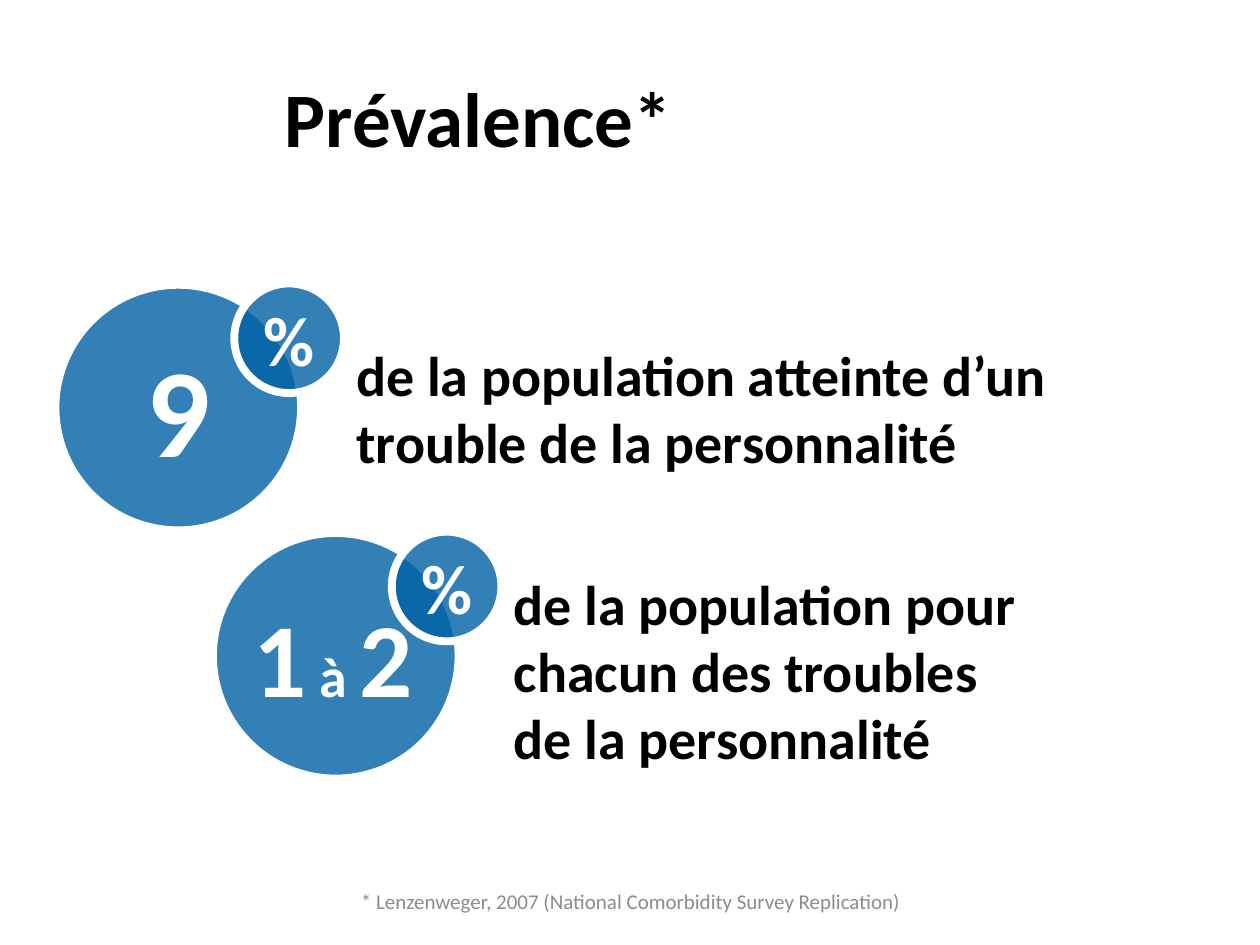
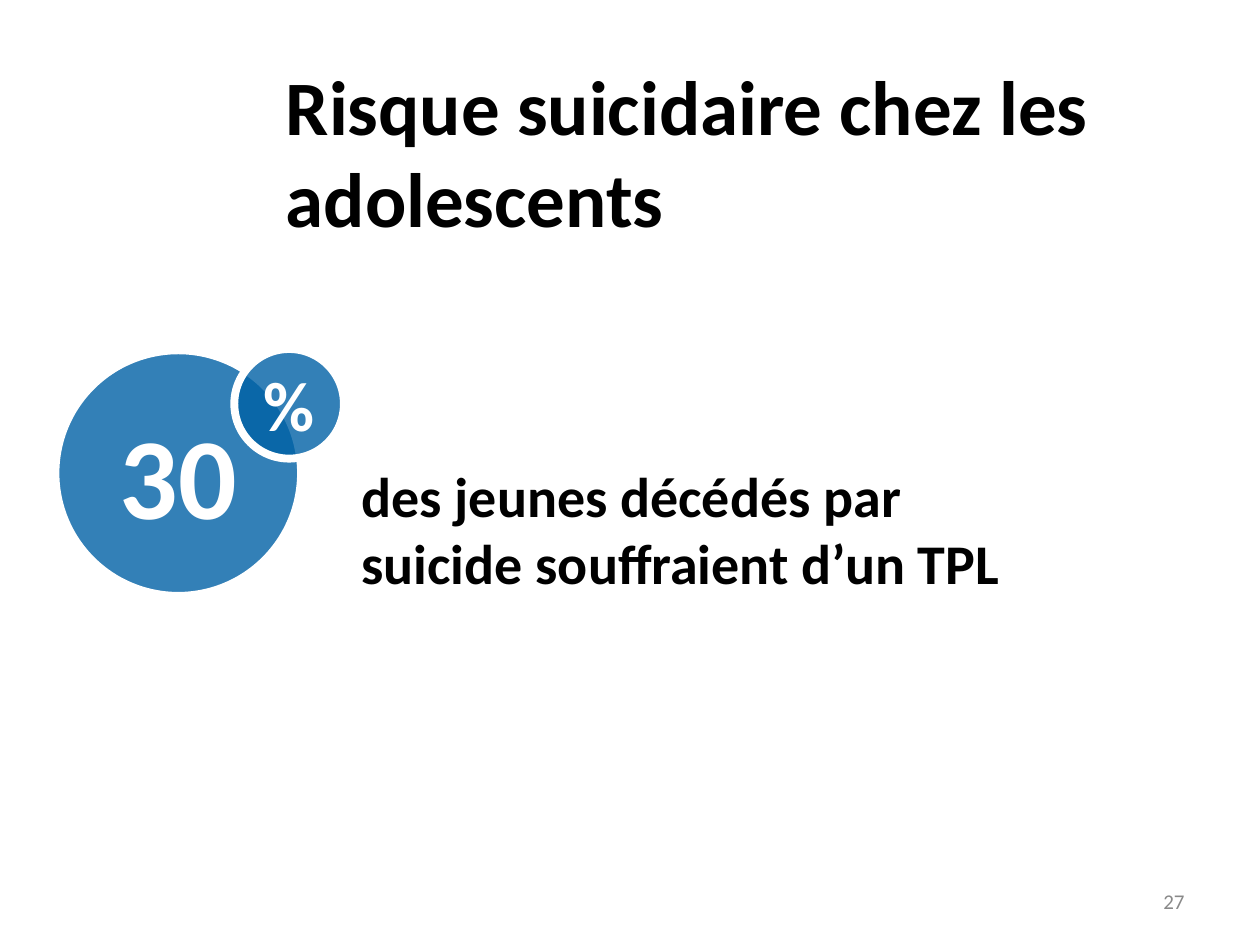
import pptx
import pptx.dml.color
import pptx.enum.shapes
import pptx.enum.text
import pptx.oxml
import pptx.oxml.ns
import pptx.util

Inches = pptx.util.Inches
ALIGN = pptx.enum.text.PP_ALIGN
ANCHOR = pptx.enum.text.MSO_ANCHOR


def color(value):
    return pptx.dml.color.RGBColor.from_string(value)


class SlideBuilder:
    font = "Calibri"
    blue = "0061A5"
    white = "FFFFFF"
    black = "000000"
    opacity = 80
    circle_size = 1.97
    badge_size = 0.87
    badge_offset = 1.43

    def __init__(self):
        self.deck = pptx.Presentation()
        self.deck.slide_width = Inches(10)
        self.deck.slide_height = Inches(7.5)
        self.page = None

    def new_page(self):
        self.page = self.deck.slides.add_slide(self.deck.slide_layouts[6])

    def style(self, span, size, tint, bold):
        span.font.name = self.font
        span.font.size = pptx.util.Pt(size)
        span.font.bold = bold
        span.font.color.rgb = color(tint)

    def text(self, text, left, top, width, height, size, tint=black,
             bold=True, align=ALIGN.LEFT, anchor=ANCHOR.MIDDLE):
        box = self.page.shapes.add_textbox(
            Inches(left), Inches(top), Inches(width), Inches(height))
        frame = box.text_frame
        frame.word_wrap = True
        frame.vertical_anchor = anchor
        frame.text = text
        para = frame.paragraphs[0]
        para.alignment = align
        for span in para.runs:
            self.style(span, size, tint, bold)

    def title(self, text, left, top):
        self.text(text, left, top, 6.77, 1.25, 44)

    def statement(self, text, left, top, width, height):
        self.text(text, left, top, width, height, 32, anchor=ANCHOR.TOP)

    def footer(self, text, left, width, tint, align):
        self.text(text, left, 6.95, width, 0.4, 12, tint, False, align)

    def circle(self, left, top, diameter, border, parts):
        shape = self.page.shapes.add_shape(
            pptx.enum.shapes.MSO_SHAPE.OVAL,
            Inches(left), Inches(top), Inches(diameter), Inches(diameter))
        shape.shadow.inherit = False
        shape.fill.solid()
        shape.fill.fore_color.rgb = color(self.blue)
        fill = shape.fill.fore_color._xFill.find(pptx.oxml.ns.qn("a:srgbClr"))
        fill.append(pptx.oxml.parse_xml(
            f'<a:alpha {pptx.oxml.ns.nsdecls("a")} val="{self.opacity * 1000}"/>'))
        shape.line.color.rgb = color(self.white)
        shape.line.width = pptx.util.Pt(border)
        frame = shape.text_frame
        frame.word_wrap = True
        frame.vertical_anchor = ANCHOR.MIDDLE
        para = frame.paragraphs[0]
        para.alignment = ALIGN.CENTER
        for text, size in parts:
            span = para.add_run()
            span.text = text
            self.style(span, size, self.white, True)
        return shape

    def percentage(self, left, top, parts):
        figure = self.circle(left, top, self.circle_size, 6, parts)
        self.circle(left + self.badge_offset, top, self.badge_size, 4.5, [("%", 40)])
        return figure


def build_prevalence(builder):
    builder.new_page()
    builder.title("Prévalence*", 2.16, 0.3)
    builder.percentage(0.43, 2.25, [("9", 72)])
    builder.statement("de la population atteinte d’un trouble de la personnalité",
                      2.73, 2.65, 6.91, 1.18)
    span_figure = builder.percentage(1.68, 4.22, [("1", 60), (" à ", 32), ("2", 60)])
    span_figure.text_frame.margin_left = Inches(0.04)
    span_figure.text_frame.margin_right = Inches(0.08)
    builder.statement("de la population pour\vchacun des troubles\vde la personnalité",
                      3.98, 4.47, 6.91, 1.72)
    builder.footer("* Lenzenweger, 2007 (National Comorbidity Survey Replication)",
                   1.86, 6.29, "8C8C8C", ALIGN.CENTER)


def build_suicide_risk(builder):
    builder.new_page()
    builder.title("Risque suicidaire chez les adolescents", 2.17, 0.57)
    builder.percentage(0.43, 2.77, [("30", 66)])
    builder.statement("des jeunes décédés par suicide souffraient d’un TPL",
                      2.77, 3.61, 5.59, 1.18)
    builder.footer("27", 7.17, 2.33, "898989", ALIGN.RIGHT)


def main():
    builder = SlideBuilder()
    build_prevalence(builder)
    build_suicide_risk(builder)
    builder.deck.save("out.pptx")


if __name__ == "__main__":
    main()
